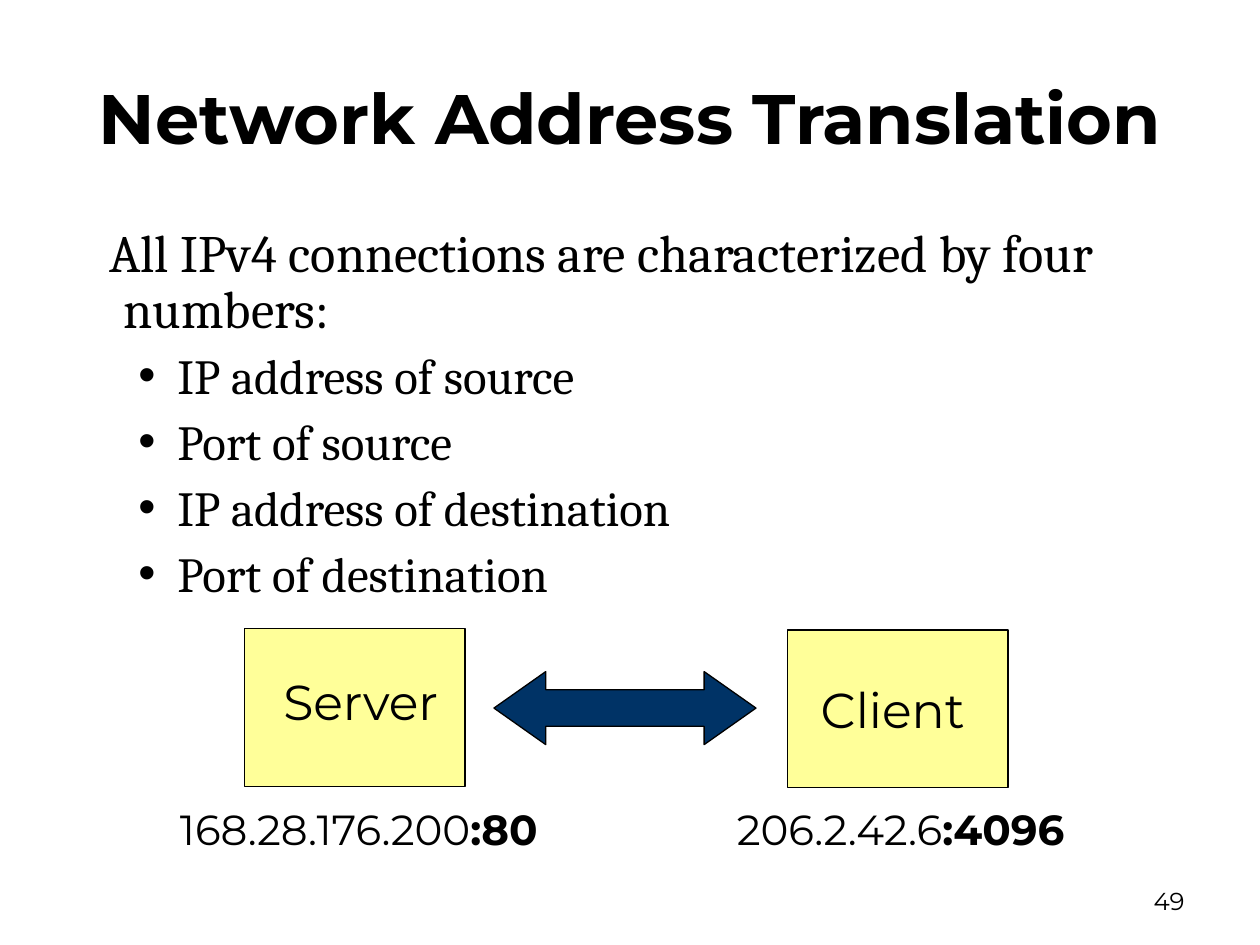
from pptx import Presentation
from pptx.dml.color import RGBColor
from pptx.enum.shapes import MSO_SHAPE
from pptx.enum.text import MSO_ANCHOR, PP_ALIGN
from pptx.oxml.ns import qn
from pptx.util import Inches, Pt

RECT, ARROW = MSO_SHAPE.RECTANGLE, MSO_SHAPE.LEFT_RIGHT_ARROW
TOP, MIDDLE = MSO_ANCHOR.TOP, MSO_ANCHOR.MIDDLE
LEFT, CENTER, RIGHT = PP_ALIGN.LEFT, PP_ALIGN.CENTER, PP_ALIGN.RIGHT
HEAD_FONT, BODY_FONT = "Montserrat", "Cambria"
BLACK, YELLOW, NAVY = "000000", "FFFF99", "003366"
MARGIN, CONTENT_W = 0.5, 9

BULLETS = ["IP address of source", "Port of source",
           "IP address of destination", "Port of destination"]


def color(hex_value):
    return RGBColor.from_string(hex_value)


def add_run(p, text, size, font=HEAD_FONT, bold=False):
    r = p.add_run()
    r.text = text
    r.font.size, r.font.name, r.font.bold = Pt(size), font, bold
    r.font.color.rgb = color(BLACK)


def add_text(s, box, runs, size, align=LEFT, anchor=TOP):
    """Text box of one paragraph; runs are (text, bold) pairs."""
    tf = s.shapes.add_textbox(*map(Inches, box)).text_frame
    tf.word_wrap = True
    tf.vertical_anchor = anchor
    p = tf.paragraphs[0]
    p.alignment = align
    for text, bold in runs:
        add_run(p, text, size, bold=bold)


def add_block(s, kind, box, fill):
    sp = s.shapes.add_shape(kind, *map(Inches, box))
    sp.shadow.inherit = False
    sp.fill.solid()
    sp.fill.fore_color.rgb = color(fill)
    sp.line.color.rgb = color(BLACK)
    sp.line.width = Pt(0.75)
    return sp


def set_title(s, text):
    title = s.shapes.title
    title.left, title.top, title.width, title.height = map(
        Inches, (MARGIN, 0.3, CONTENT_W, 1.25))
    tf = title.text_frame
    tf.vertical_anchor = MIDDLE
    p = tf.paragraphs[0]
    p.alignment = CENTER
    add_run(p, text, 40, bold=True)


def format_body_line(p, margin, indent, bullet=None):
    pPr = p._p.get_or_add_pPr()
    pPr.set("marL", str(Inches(margin)))
    pPr.set("indent", str(Inches(indent)))
    if bullet:
        pPr.append(pPr.makeelement(qn("a:buFont"), {"typeface": "Arial"}))
        pPr.append(pPr.makeelement(qn("a:buChar"), {"char": bullet}))
    p.line_spacing = Pt(32)


def add_body(s, intro, bullets):
    box = (MARGIN, 1.75, CONTENT_W, 3.2)
    tf = s.shapes.add_textbox(*map(Inches, box)).text_frame
    tf.word_wrap = True
    p = tf.paragraphs[0]
    format_body_line(p, 0.38, -0.11)
    add_run(p, intro, 30, BODY_FONT)
    for text in bullets:
        p = tf.add_paragraph()
        p.level = 1
        format_body_line(p, 0.81, -0.31, "•")
        p.space_before = Pt(5.6)
        add_run(p, text, 28, BODY_FONT)


def main():
    prs = Presentation()
    prs.slide_width, prs.slide_height = Inches(10), Inches(7.5)
    s = prs.slides.add_slide(prs.slide_layouts[5])

    # Title, body and page number
    set_title(s, "Network Address Translation")
    add_body(s, "All IPv4 connections are characterized by four numbers:", BULLETS)
    add_text(s, (7.17, 6.95, 2.33, 0.4), [("49", False)], 14, RIGHT, MIDDLE)

    # The two hosts, each with its name, and its address and port below
    hosts = [
        ((1.94, 4.99), "Server", (2.15, 5.28), LEFT,
         "168.28.176.200", ":80", (1.33, 3.35)),
        ((6.25, 5), "Client", (6.17, 5.34), CENTER,
         "206.2.42.6", ":4096", (5.75, 3.08)),
    ]
    for corner, name, name_at, align, address, port, (left, width) in hosts:
        add_block(s, RECT, (*corner, 1.75, 1.25), YELLOW)
        add_text(s, (*name_at, 1.83, 0.57), [(name, False)], 28, align)
        add_text(s, (left, 6.33, width, 0.5), [(address, False), (port, True)], 24)

    # Two-way link between the hosts
    link = add_block(s, ARROW, (3.92, 5.33, 2.08, 0.58), NAVY)
    link.adjustments[0], link.adjustments[1] = 0.5, 0.71

    prs.save("out.pptx")


if __name__ == "__main__":
    main()
